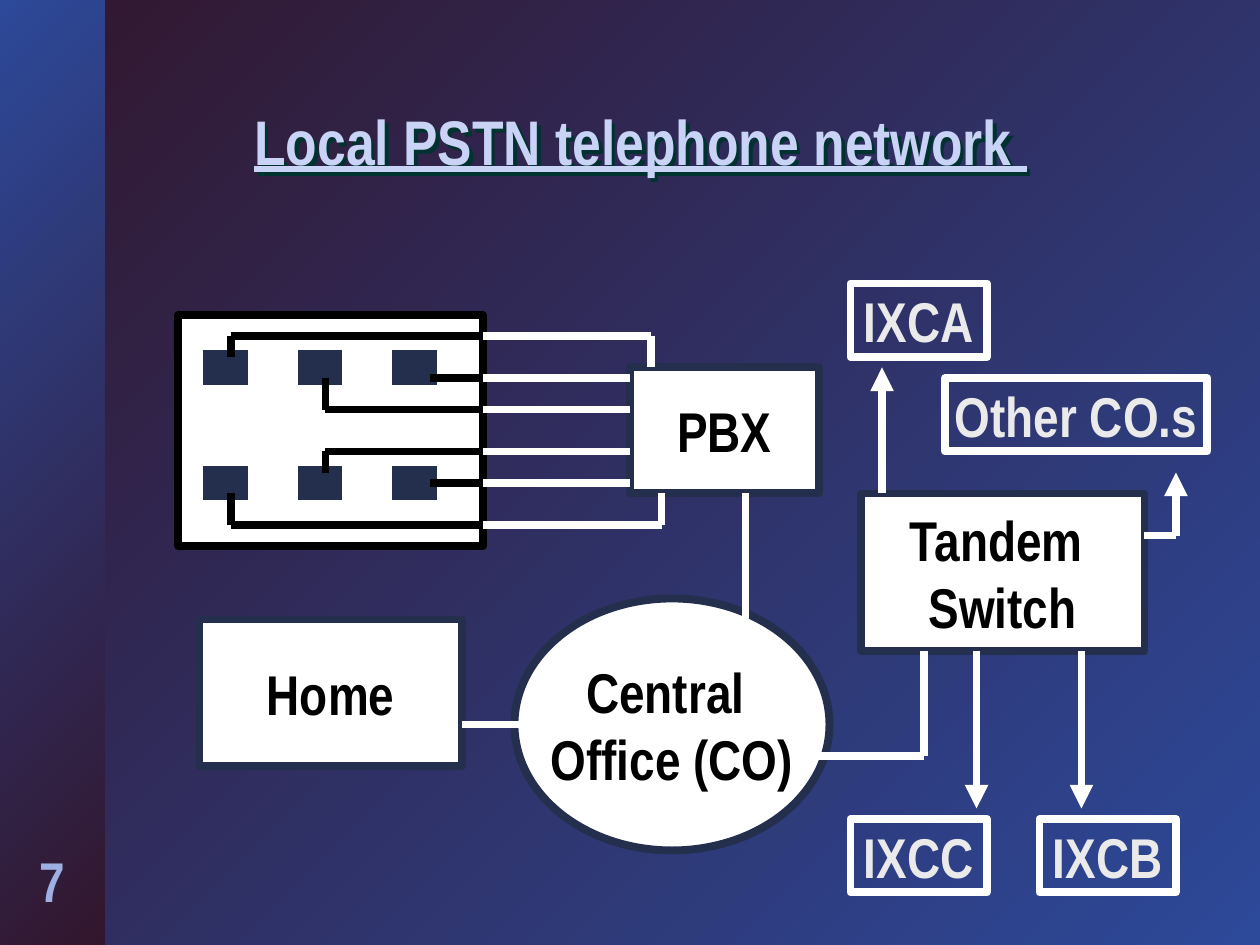
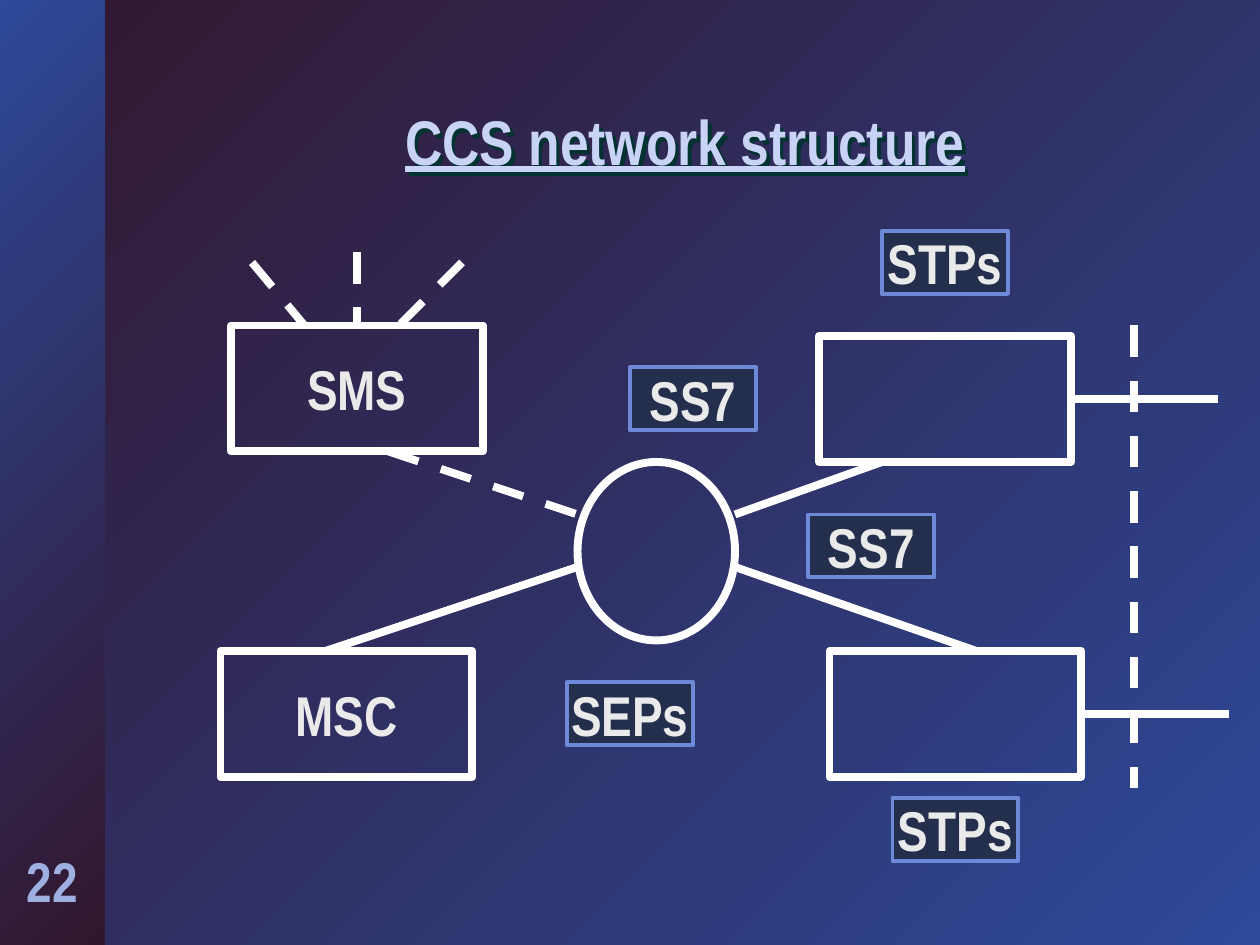
"""Build two telephone-network diagrams laid out on a 120 by 90 grid."""
from dataclasses import dataclass
from itertools import pairwise, product

from lxml import etree
from pptx import Presentation, util as u
from pptx.dml.color import RGBColor
from pptx.enum import dml, shapes, text
from pptx.oxml import ns

TITLE_LEFT, TITLE_TOP = 13.5, 10
WALL = 46
PBX_SIDE = 60

LOCAL_NETWORK = {
    "number": "7",
    "title": "Local PSTN telephone network ",
    "title_size": (95, 10),
    "boxes": [
        ("building", (17, 30, 29, 22), ""),
        ("node", (60, 35, 18, 12), "PBX"),
        ("node", (19, 59, 25, 14), "Home"),
        ("office", (49, 57, 30, 24), "Central \nOffice (CO)"),
        ("node", (82, 47, 27, 15), "Tandem \nSwitch"),
        *[("phone", (x, y, 5, 4), "") for x, y in product((19, 28, 37), (33, 44))],
        ("outline", (81, 78, 13, 7), "IXCC"),
        ("outline", (99, 78, 13, 7), "IXCB"),
        ("outline", (81, 27, 13, 7), "IXCA"),
        ("outline", (90, 36, 25, 7), "Other CO.s"),
    ],
    "phone_wires": [
        ([(22, 34), (22, 32)], [(62, 32), (62, 35)]),
        ([(41, 36)], [(PBX_SIDE, 36)]),
        ([(31, 36), (31, 39)], [(PBX_SIDE, 39)]),
        ([(31, 45), (31, 43)], [(PBX_SIDE, 43)]),
        ([(41, 46)], [(PBX_SIDE, 46)]),
        ([(22, 47), (22, 50)], [(63, 50), (63, 47)]),
    ],
    "lines": [
        ("solid", [(71, 47), (71, 59)]),
        ("solid", [(44, 69), (50, 69)]),
        ("solid", [(78, 72), (88, 72), (88, 62)]),
        ("arrow", [(93, 62), (93, 77)]),
        ("arrow", [(103, 62), (103, 77)]),
        ("arrow", [(84, 47), (84, 35)]),
        ("arrow", [(109, 51), (112, 51), (112, 45)]),
    ],
}

CCS_NETWORK = {
    "number": "22",
    "title": "CCS network structure",
    "title_size": (103.5, 8),
    "boxes": [
        ("outline", (22, 31, 24, 12), "SMS"),
        ("outline", (78, 32, 24, 12), ""),
        ("outline", (21, 62, 24, 12), "MSC"),
        ("outline", (79, 62, 24, 12), ""),
        ("ring", (55, 44, 15, 17), ""),
        ("label", (54, 65, 12, 6), "SEPs"),
        ("label", (77, 49, 12, 6), "SS7"),
        ("label", (60, 35, 12, 6), "SS7"),
        ("label", (84, 22, 12, 6), "STPs"),
        ("label", (85, 76, 12, 6), "STPs"),
    ],
    "phone_wires": [],
    "lines": [
        ("solid", [(31, 62), (55, 54)]),
        ("solid", [(70, 54), (93, 62)]),
        ("dash", [(37, 43), (55, 49)]),
        ("solid", [(70, 49), (84, 44)]),
        ("solid", [(103, 68), (117, 68)]),
        ("solid", [(102, 38), (116, 38)]),
        ("dash", [(108, 31), (108, 75)]),
        ("dash", [(24, 25), (29, 31)]),
        ("dash", [(34, 24), (34, 31)]),
        ("dash", [(44, 25), (38, 31)]),
    ],
}


@dataclass(frozen=True)
class Theme:
    """Colours, type and line weights shared by the slides."""
    font: str = "Arial Narrow"
    title_pt: float = 36
    body_pt: float = 32
    thick: float = 4.5
    thin: float = 2.25
    plum: str = "32162D"
    blue: str = "2D4999"
    navy: str = "242F4E"
    rim: str = "6D89D7"
    white: str = "FFFFFF"
    black: str = "000000"
    pale: str = "EAEAEA"
    title: str = "C8D3F6"
    title_shadow: str = "003230"
    number: str = "9EB0E2"


T = Theme()
RECT, OVAL = shapes.MSO_SHAPE.RECTANGLE, shapes.MSO_SHAPE.OVAL
STYLES = {
    "building": (RECT, T.white, T.black, T.thick, T.black),
    "node": (RECT, T.white, T.navy, T.thick, T.black),
    "office": (OVAL, T.white, T.navy, T.thick, T.black),
    "phone": (RECT, T.navy, T.white, T.thick, T.pale),
    "outline": (RECT, None, T.white, T.thick, T.pale),
    "ring": (OVAL, None, T.white, T.thick, T.pale),
    "label": (RECT, T.navy, T.rim, T.thin, T.pale),
}


def grid(*units):
    """Turn grid units, twelve to the inch, into lengths."""
    return [u.Inches(unit / 12) for unit in units]


def rgb(colour):
    return RGBColor.from_string(colour)


def write(frame, words, size=T.body_pt, colour=T.pale, underline=None,
          anchor=text.MSO_ANCHOR.TOP, wrap=True, spacing=None):
    """Fill a text frame with centred bold lines."""
    frame.word_wrap = wrap
    frame.vertical_anchor = anchor
    for index, line in enumerate(words.split("\n")):
        paragraph = frame.add_paragraph() if index else frame.paragraphs[0]
        paragraph.alignment = text.PP_ALIGN.CENTER
        paragraph.line_spacing = spacing
        run = paragraph.add_run()
        run.text = line
        font = run.font
        font.name, font.size, font.bold, font.underline = T.font, u.Pt(size), True, underline
        font.color.rgb = rgb(colour)


def shade(fill, start, end):
    """Apply a diagonal gradient running down to the right."""
    fill.gradient()
    fill.gradient_angle = 315
    for stop, colour in zip(fill.gradient_stops, (start, end)):
        stop.color.rgb = rgb(colour)


def cast_shadow(box):
    """Give the title text its offset shadow."""
    effects = etree.SubElement(box.element.spPr, ns.qn("a:effectLst"))
    shadow = etree.SubElement(effects, ns.qn("a:outerShdw"), dist="35900", dir="2700000",
                              algn="ctr", rotWithShape="0")
    etree.SubElement(shadow, ns.qn("a:srgbClr"), val=T.title_shadow)


def draw_frame(slide, content):
    """Draw the background, side band, slide number and title."""
    shade(slide.background.fill, T.plum, T.blue)
    band = slide.shapes.add_shape(RECT, *grid(0, 0, 10, 90))
    band.shadow.inherit = False
    band.line.fill.background()
    shade(band.fill, T.blue, T.plum)
    number = slide.shapes.add_textbox(*grid(1, 80, 8, 7.6))
    write(number.text_frame, content["number"], colour=T.number)
    title = slide.shapes.add_textbox(*grid(TITLE_LEFT, TITLE_TOP, *content["title_size"]))
    write(title.text_frame, content["title"], size=T.title_pt, colour=T.title,
          underline=True, spacing=0.9)
    cast_shadow(title)


def draw_box(slide, style, place, words):
    outline, fill, edge, weight, ink = STYLES[style]
    box = slide.shapes.add_shape(outline, *grid(*place))
    box.shadow.inherit = False
    if fill:
        box.fill.solid()
        box.fill.fore_color.rgb = rgb(fill)
    else:
        box.fill.background()
    box.line.color.rgb = rgb(edge)
    box.line.width = u.Pt(weight)
    if words:
        write(box.text_frame, words, colour=ink, anchor=text.MSO_ANCHOR.MIDDLE, wrap=False)
    return box


def side_middles(box, place):
    """Map the middle of each side to its box and connection site."""
    x, y, w, h = place
    middles = (x + w / 2, y), (x, y + h / 2), (x + w / 2, y + h), (x + w, y + h / 2)
    return {middle: (box, site) for site, middle in enumerate(middles)}


def draw_path(slide, kind, points, joints, colour=T.white):
    """Draw straight segments, joined to boxes where they meet a side's middle."""
    for start, end in pairwise(points):
        segment = slide.shapes.add_connector(
            shapes.MSO_CONNECTOR.STRAIGHT, *grid(*start, *end))
        etree.SubElement(segment.element.spPr, ns.qn("a:effectLst"))
        segment.line.color.rgb = rgb(colour)
        segment.line.width = u.Pt(T.thick)
        if kind == "dash":
            segment.line.dash_style = dml.MSO_LINE.DASH
        if kind == "arrow" and end == points[-1]:
            etree.SubElement(segment.line._get_or_add_ln(), ns.qn("a:tailEnd"), type="triangle")
        if start in joints:
            segment.begin_connect(*joints[start])
        if end in joints:
            segment.end_connect(*joints[end])


def build_slide(deck, content):
    slide = deck.slides.add_slide(deck.slide_layouts[6])
    draw_frame(slide, content)
    joints = {}
    for style, place, words in content["boxes"]:
        box = draw_box(slide, style, place, words)
        if STYLES[style][0] == RECT:
            joints.update(side_middles(box, place))
    for inside, outside in content["phone_wires"]:
        exit_point = (WALL, inside[-1][1])
        draw_path(slide, "solid", [exit_point, *outside], joints)
        draw_path(slide, "solid", [*inside, exit_point], joints, T.black)
    for kind, points in content["lines"]:
        draw_path(slide, kind, points, joints)


def main():
    deck = Presentation()
    deck.slide_width, deck.slide_height = grid(120, 90)
    for content in (LOCAL_NETWORK, CCS_NETWORK):
        build_slide(deck, content)
    deck.save("out.pptx")


if __name__ == "__main__":
    main()
